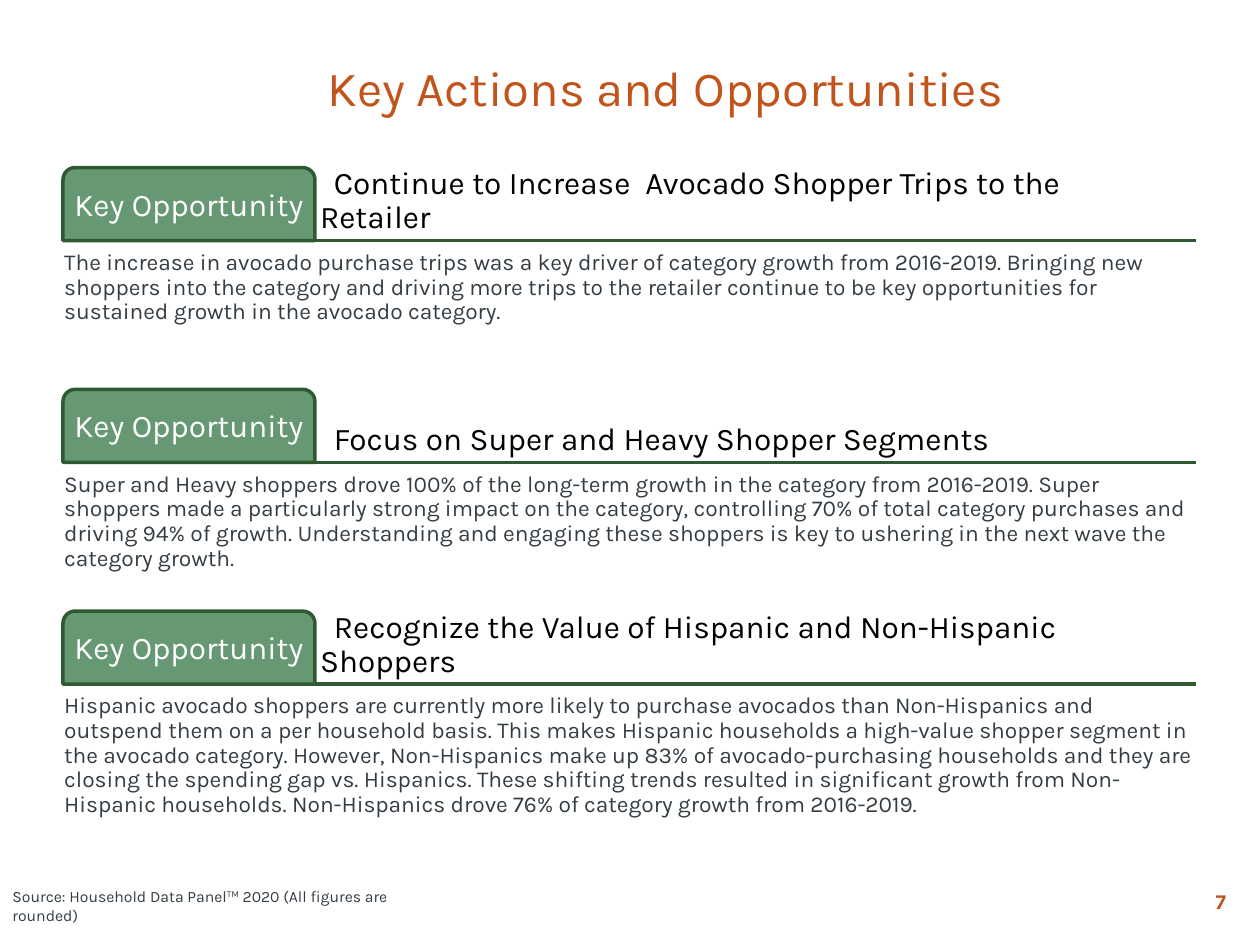
"""Build the key actions and opportunities slide."""
from lxml.etree import SubElement
from pptx import Presentation
from pptx.dml.color import RGBColor
from pptx.enum.shapes import MSO_CONNECTOR, MSO_SHAPE
from pptx.enum.text import MSO_ANCHOR, PP_ALIGN
from pptx.oxml.ns import qn
from pptx.util import Inches, Pt

ORANGE = RGBColor(0xC2, 0x53, 0x1A)
GREEN = RGBColor(0x66, 0x99, 0x73)
DARK_GREEN = RGBColor(0x2F, 0x59, 0x31)
SLATE = RGBColor(0x34, 0x3D, 0x43)
BLACK = RGBColor(0, 0, 0)
WHITE = RGBColor(0xFF, 0xFF, 0xFF)

LEFT, TAB_WIDTH, TAB_HEIGHT, RULE_WIDTH = 0.5, 2, 0.58, 8.99
FIRST_TOP, STEP = 1.33, 1.76

OPPORTUNITIES = [
    ("Continue to Increase  Avocado Shopper Trips to the Retailer",
     "The increase in avocado purchase trips was a key driver of category growth "
     "from 2016-2019. Bringing new shoppers into the category and driving more trips "
     "to the retailer continue to be key opportunities for sustained growth in the "
     "avocado category."),
    ("Focus on Super and Heavy Shopper Segments",
     "Super and Heavy shoppers drove 100% of the long-term growth in the category from "
     "2016-2019. Super shoppers made a particularly strong impact on the category, "
     "controlling 70% of total category purchases and driving 94% of growth. "
     "Understanding and engaging these shoppers is key to ushering in the next wave "
     "the category growth."),
    ("Recognize the Value of Hispanic and Non-Hispanic Shoppers",
     "Hispanic avocado shoppers are currently more likely to purchase avocados than "
     "Non-Hispanics and outspend them on a per household basis. This makes Hispanic "
     "households a high-value shopper segment in the avocado category. However, "
     "Non-Hispanics make up 83% of avocado-purchasing households and they are closing "
     "the spending gap vs. Hispanics. These shifting trends resulted in significant "
     "growth from Non-Hispanic households. Non-Hispanics drove 76% of category growth "
     "from 2016-2019."),
]


def set_values(target, values):
    """Set each named attribute of the target."""
    for name, value in values.items():
        setattr(target, name, value)


def add_span(para, text, size, color, bold=False):
    """Append a formatted run to a paragraph."""
    span = para.add_run()
    span.text = text
    set_values(span.font, {"name": "Karla", "size": Pt(size), "bold": bold})
    span.font.color.rgb = color
    return span


def prepare_text(shape, anchor, align=PP_ALIGN.LEFT, spacing=None, margins=None):
    """Set up a shape's text frame and return its first paragraph."""
    frame = shape.text_frame
    set_values(frame, {"word_wrap": True, "vertical_anchor": anchor})
    if margins:
        sides = ("left", "top", "right", "bottom")
        set_values(frame, {f"margin_{side}": Inches(margin)
                           for side, margin in zip(sides, margins)})
    para = frame.paragraphs[0]
    set_values(para, {"alignment": align, "line_spacing": spacing})
    return para


def add_text(page, area, anchor, **layout):
    """Add a text box and return its first paragraph."""
    box = page.shapes.add_textbox(*map(Inches, area))
    return prepare_text(box, anchor, **layout)


def add_rule(page, top):
    """Draw the horizontal rule below a heading."""
    rule = page.shapes.add_connector(
        MSO_CONNECTOR.STRAIGHT, Inches(LEFT), Inches(top),
        Inches(LEFT + RULE_WIDTH), Inches(top))
    rule.line.color.rgb = DARK_GREEN
    rule.line.width = Pt(2)
    SubElement(rule.element.spPr, qn("a:effectLst"))


def add_tab(page, top):
    """Draw the green tab with its label."""
    tab = page.shapes.add_shape(
        MSO_SHAPE.ROUND_2_SAME_RECTANGLE, Inches(LEFT), Inches(top),
        Inches(TAB_WIDTH), Inches(TAB_HEIGHT))
    tab.shadow.inherit = False
    tab.fill.solid()
    tab.fill.fore_color.rgb = GREEN
    tab.line.color.rgb = DARK_GREEN
    tab.line.width = Pt(2)
    para = prepare_text(tab, MSO_ANCHOR.MIDDLE, align=PP_ALIGN.CENTER,
                        spacing=0.9, margins=(0.04,) * 4)
    add_span(para, "Key Opportunity", 18, WHITE)


def add_opportunity(page, top, heading, body):
    """Add one opportunity: rule, heading, tab and explanation."""
    bottom = top + TAB_HEIGHT
    add_rule(page, bottom)
    para = add_text(page, (LEFT + TAB_WIDTH, top, 6.65, TAB_HEIGHT),
                    MSO_ANCHOR.BOTTOM, spacing=0.9, margins=(0.04,) * 4)
    para._p.get_or_add_pPr().set("indent", str(Inches(0.11)))
    add_span(para, heading, 18, BLACK)
    add_tab(page, top)
    para = add_text(page, (LEFT, bottom, RULE_WIDTH, 1.15), MSO_ANCHOR.TOP,
                    spacing=0.9, margins=(0.01, 0.08, 0.01, 0.01))
    add_span(para, body, 13, SLATE)


def add_source(page):
    """Add the source line with its raised trademark sign."""
    para = add_text(page, (0, 7.08, 3.58, 0.21), MSO_ANCHOR.MIDDLE)
    add_span(para, "Source: Household Data Panel", 9, SLATE)
    mark = add_span(para, "TM", 9, SLATE)
    mark.font._element.set("baseline", "30000")
    add_span(para, " 2020 (All figures are rounded)", 9, SLATE)


def main():
    """Build and save the deck."""
    deck = Presentation()
    set_values(deck, {"slide_width": Inches(10), "slide_height": Inches(7.5)})
    page = deck.slides.add_slide(deck.slide_layouts[6])
    title = add_text(page, (2.5, 0.3, 7, 0.78), MSO_ANCHOR.MIDDLE)
    add_span(title, "Key Actions and Opportunities", 28, ORANGE)
    for index, (heading, body) in enumerate(OPPORTUNITIES):
        add_opportunity(page, FIRST_TOP + index * STEP, heading, body)
    add_source(page)
    number = add_text(page, (9.33, 7, 0.5, 0.25), MSO_ANCHOR.TOP, align=PP_ALIGN.RIGHT)
    add_span(number, "7", 12, ORANGE, bold=True)
    deck.save("out.pptx")


if __name__ == "__main__":
    main()
